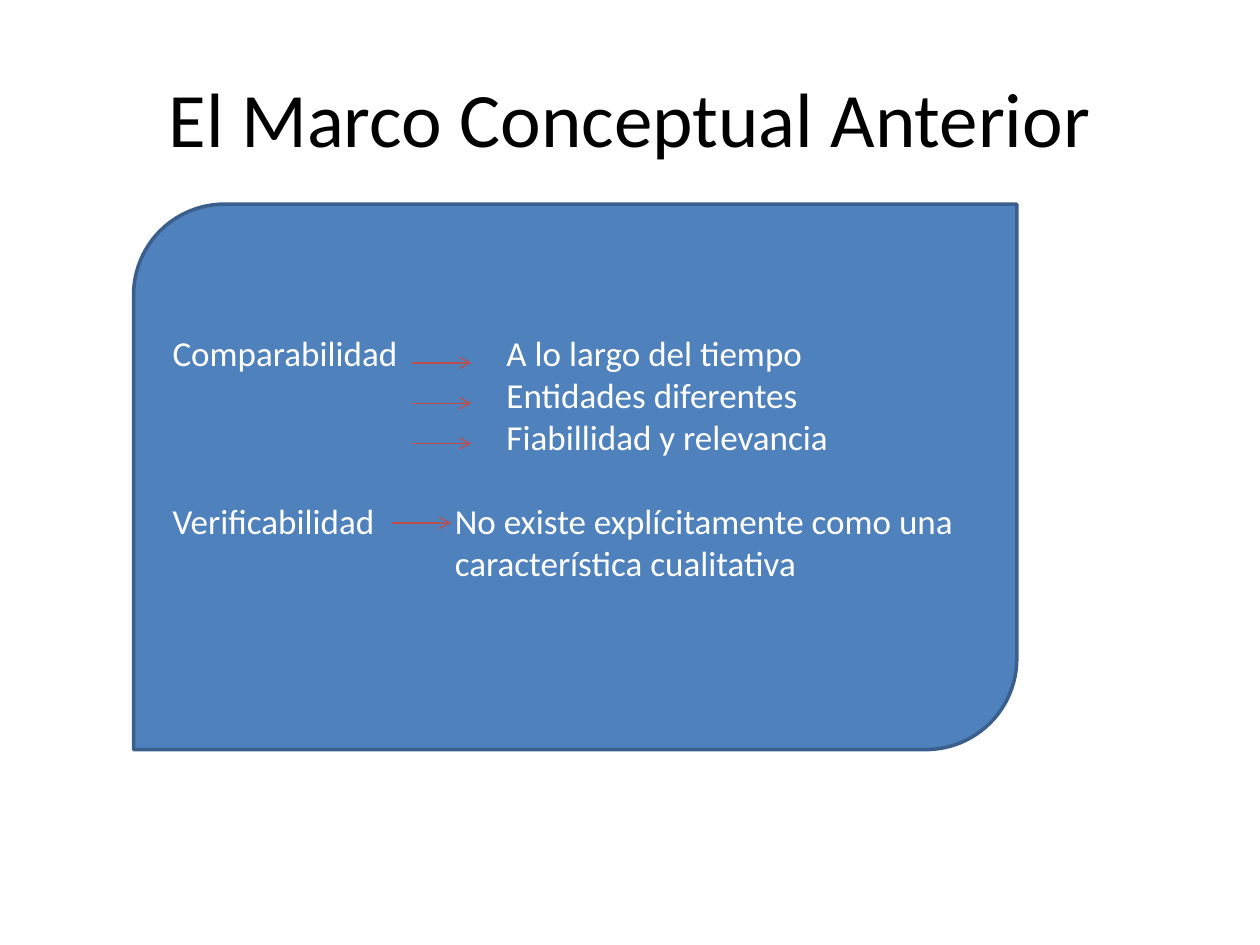
import pptx
import pptx.util
import pptx.dml.color
import pptx.enum.shapes
import pptx.enum.text
import pptx.oxml.ns
import lxml.etree

Inch, Pt = pptx.util.Inches, pptx.util.Pt
Shape = pptx.enum.shapes.MSO_SHAPE
Align = pptx.enum.text.PP_ALIGN
Anchor = pptx.enum.text.MSO_ANCHOR
qn = pptx.oxml.ns.qn


def color(code):
    return pptx.dml.color.RGBColor.from_string(code)


def style(para, size, code, align):
    para.alignment = align
    para.font.name = "Calibri"
    para.font.size = Pt(size)
    para.font.color.rgb = color(code)


deck = pptx.Presentation()
deck.slide_width, deck.slide_height = Inch(10), Inch(7.5)
slide = deck.slides.add_slide(deck.slide_layouts[6])

# Title
title = slide.shapes.add_textbox(Inch(0.5), Inch(0.3), Inch(9), Inch(1.25))
frame = title.text_frame
frame.word_wrap = True
frame.vertical_anchor = Anchor.MIDDLE
frame.text = "El Marco Conceptual Anterior"
style(frame.paragraphs[0], 44, "000000", Align.CENTER)

# Panel with two opposite round corners
panel = slide.shapes.add_shape(
    Shape.ROUND_2_DIAG_RECTANGLE, Inch(1.06), Inch(1.62), Inch(7.01), Inch(4.33))
panel.shadow.inherit = False
panel.fill.solid()
panel.fill.fore_color.rgb = color("4F81BD")
panel.line.color.rgb = color("3A5F8C")
panel.line.width = Pt(2)

# Text rows: wording, tab stop in inches, space before in points
rows = [
    ("Comparabilidad\tA lo largo del tiempo", 2.65, 0),
    ("\tEntidades diferentes", 2.65, 0),
    ("\tFiabillidad y relevancia", 2.65, 0),
    ("Verificabilidad\tNo existe explícitamente como una"
     "\v\tcaracterística cualitativa", 2.24, 24),
]
frame = panel.text_frame
frame.word_wrap = True
frame.vertical_anchor = Anchor.MIDDLE
frame.margin_bottom = Inch(0.35)
for num, (text, stop, gap) in enumerate(rows):
    para = frame.add_paragraph() if num else frame.paragraphs[0]
    para.text = text
    if gap:
        para.space_before = Pt(gap)
    tabs = lxml.etree.SubElement(para._p.get_or_add_pPr(), qn("a:tabLst"))
    lxml.etree.SubElement(tabs, qn("a:tab"), pos=str(Inch(stop)), algn="l")
    style(para, 20, "FFFFFF", Align.LEFT)

# Arrows from each term to its notes
for left, top in [(3.27, 2.88), (3.27, 3.2), (3.27, 3.52), (3.11, 4.15)]:
    arrow = slide.shapes.add_connector(
        pptx.enum.shapes.MSO_CONNECTOR.STRAIGHT,
        Inch(left), Inch(top), Inch(left + 0.47), Inch(top))
    arrow.line.color.rgb = color("BF4C48")
    arrow.line.width = Pt(0.75)
    lxml.etree.SubElement(arrow.line._get_or_add_ln(), qn("a:tailEnd"), type="arrow")
    lxml.etree.SubElement(arrow._element.spPr, qn("a:effectLst"))

deck.save("out.pptx")
